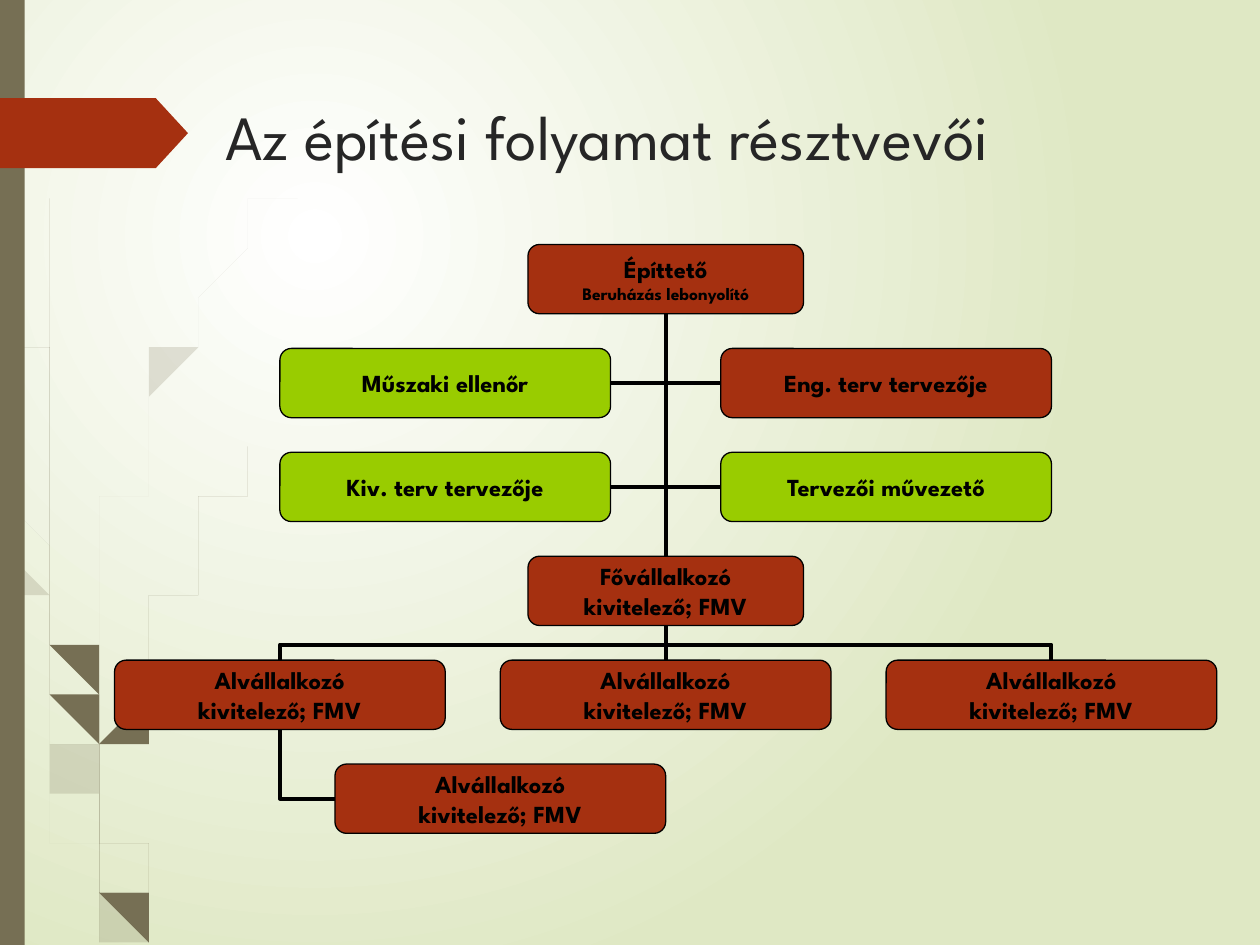
from math import hypot

from lxml.etree import SubElement
from pptx import Presentation
from pptx.dml.color import RGBColor
from pptx.enum.shapes import MSO_CONNECTOR, MSO_SHAPE
from pptx.enum.text import MSO_ANCHOR, PP_ALIGN
from pptx.oxml.ns import qn
from pptx.util import Cm, Pt

FONT = "League Spartan"
WHITE = RGBColor(0xFF, 0xFF, 0xFF)
PALE_GREEN = RGBColor(0xDF, 0xE8, 0xC4)
OLIVE = RGBColor(0x76, 0x6F, 0x54)
RED = RGBColor(0xA5, 0x30, 0x10)
GREEN = RGBColor(0x99, 0xCC, 0x00)
BLACK = RGBColor(0, 0, 0)
DARK_GREY = RGBColor(0x26, 0x26, 0x26)

TOP, LEFT, BOTTOM, RIGHT = 0, 1, 2, 3
SUBCONTRACTOR = "Alvállalkozó\nkivitelező; FMV"

# Centre lines of the grass blades, in cm from the corner of their region
PALE_BLADES = [
    [(0, 7.4), (0.28, 9.3), (1.04, 13.23), (1.5, 15.06), (2.18, 17.6), (2.69, 19.05)],
    [(0.2, 8.89), (0.51, 11.94), (1.18, 15.75), (1.63, 17.48), (2.08, 19.05)],
    [(5.51, 3.89), (4.03, 6.22), (2.81, 8.86), (1.92, 11.73), (1.52, 14.83),
     (1.56, 16.41), (1.7, 17.35), (2.16, 19.05)],
]
DARK_BLADES = [
    [(0.06, 0), (0.12, 2.79), (0.37, 5.92), (0.72, 9.02), (1.17, 11.81),
     (1.47, 14.12), (2.01, 16.71), (2.39, 18.03), (2.73, 19.05)],
    [(1.47, 3.58), (1.21, 6.22), (1.1, 8.86), (1.17, 11.43), (1.9, 15.01),
     (2.29, 16.38), (2.82, 17.96), (3.25, 19.05)],
    [(5.48, 8.74), (4.29, 10.31), (3.3, 12.07), (2.59, 14.01), (2.27, 16.05),
     (2.27, 16.64), (2.36, 17.55), (2.54, 18.26), (2.84, 19.05)],
]


def paint_background(slide):
    fill = slide.background.fill
    fill.gradient()
    for stop, color in zip(fill.gradient_stops, (WHITE, PALE_GREEN)):
        stop.color.rgb = color
    gradient = slide.element.find(".//" + qn("a:gradFill"))
    gradient.remove(gradient.find(qn("a:lin")))
    circle = SubElement(gradient, qn("a:path"), {"path": "circle"})
    SubElement(circle, qn("a:fillToRect"), l="50000", t="50000", r="100000", b="100000")


def fill_plain(shape, color):
    shape.shadow.inherit = False
    shape.fill.solid()
    shape.fill.fore_color.rgb = color
    shape.line.fill.background()


def smooth(points, steps=8):
    """Run a Catmull-Rom curve through the points."""
    padded = [points[0], *points, points[-1]]
    curve = []
    for a, b, c, d in zip(padded, padded[1:], padded[2:], padded[3:]):
        for t in (step / steps for step in range(steps)):
            curve.append(tuple(
                (2 * q + (r - p) * t + (2 * p - 5 * q + 4 * r - s) * t**2
                 + (3 * q - p - 3 * r + s) * t**3) / 2
                for p, q, r, s in zip(a, b, c, d)))
    return curve + [points[-1]]


def add_blade(slide, left, top, points, opacity):
    """Draw a blade that widens from its tip to its root."""
    curve = smooth(points)
    last = len(curve) - 1
    near, far = [], []
    for i, (x, y) in enumerate(curve):
        before, after = curve[max(i - 1, 0)], curve[min(i + 1, last)]
        dx, dy = after[0] - before[0], after[1] - before[1]
        half = 0.01 + 0.05 * i / last
        nx, ny = -dy / hypot(dx, dy) * half, dx / hypot(dx, dy) * half
        near.append((x + nx, y + ny))
        far.append((x - nx, y - ny))
    outline = near + far[::-1]
    builder = slide.shapes.build_freeform(*outline[0], scale=Cm(1))
    builder.add_line_segments(outline[1:], close=True)
    blade = builder.convert_to_shape(Cm(left), Cm(top))
    fill_plain(blade, OLIVE)
    if opacity < 100:
        color = blade.element.spPr.find(".//" + qn("a:srgbClr"))
        SubElement(color, qn("a:alpha"), val=str(opacity * 1000))


def add_side_decoration(slide, left, top, height):
    for blades, opacity in ((PALE_BLADES, 20), (DARK_BLADES, 100)):
        for points in blades:
            add_blade(slide, left, top, points, opacity)
    strip = slide.shapes.add_shape(
        MSO_SHAPE.RECTANGLE, Cm(left), Cm(top), Cm(0.5), Cm(height))
    fill_plain(strip, OLIVE)


def add_header(slide, left, top, width, height):
    # Pointed tab
    tab = slide.shapes.add_shape(
        MSO_SHAPE.PENTAGON, Cm(left), Cm(top + 0.25), Cm(3.79), Cm(1.41))
    tab.adjustments[0] = 0.46
    fill_plain(tab, RED)
    # Title
    title = slide.shapes.add_textbox(
        Cm(left + 4.29), Cm(top), Cm(width - 4.29), Cm(height))
    frame = title.text_frame
    frame.word_wrap = True
    frame.vertical_anchor = MSO_ANCHOR.MIDDLE
    paragraph = frame.paragraphs[0]
    paragraph.text = "Az építési folyamat résztvevői"
    paragraph.font.name = FONT
    paragraph.font.size = Pt(36)
    paragraph.font.color.rgb = DARK_GREY


def style_connector(connector):
    connector.line.color.rgb = BLACK
    connector.line.width = Pt(2.25)
    SubElement(connector.element.spPr, qn("a:effectLst"))


def add_stem(slide, lower, upper):
    stem = slide.shapes.add_connector(MSO_CONNECTOR.STRAIGHT, 0, 0, 0, 0)
    stem.begin_connect(lower, TOP)
    stem.end_connect(upper, BOTTOM)
    style_connector(stem)


def add_corner(slide, box, side, x, y):
    """Leave the side of a box level, then turn up to (x, y)."""
    start = box.left if side == LEFT else box.left + box.width
    corner = slide.shapes.add_connector(
        MSO_CONNECTOR.ELBOW, start, box.top + box.height // 2, x, y)
    corner.element.spPr.prstGeom.set("prst", "bentConnector2")
    style_connector(corner)


def add_branch(slide, child, x, parent):
    """Rise from the top of a child, run level, rise to the parent at x."""
    child_x = x + (child.left + child.width // 2 - x)
    bottom = parent.top + parent.height
    rise, run = child.top - bottom, abs(child_x - x)
    left, top = (child_x + x - rise) // 2, (child.top + bottom - run) // 2
    begin, end = (left, left + rise) if child_x < x else (left + rise, left)
    branch = slide.shapes.add_connector(
        MSO_CONNECTOR.ELBOW, begin, top, end, top + run)
    branch.element.spPr.xfrm.set("rot", str((270 if child_x < x else 90) * 60000))
    guides = branch.element.spPr.prstGeom.get_or_add_avLst()
    SubElement(guides, qn("a:gd"), name="adj1", fmla="val 45000")
    style_connector(branch)


def add_org_chart(slide, left, top, width, height):
    unit, pitch = width / 20, height * 3 / 17

    def add_box(text, column, row, span=6, color=RED, note=None):
        box = slide.shapes.add_shape(
            MSO_SHAPE.ROUNDED_RECTANGLE, Cm(left + column * unit),
            Cm(top + row * pitch), Cm(span * unit), Cm(pitch * 2 / 3))
        fill_plain(box, color)
        box.line.color.rgb = BLACK
        box.line.width = Pt(0.75)
        frame = box.text_frame
        frame.margin_left = frame.margin_right = 0
        frame.margin_top = frame.margin_bottom = 0
        frame.word_wrap = False
        frame.vertical_anchor = MSO_ANCHOR.MIDDLE
        frame.text = text
        for paragraph in frame.paragraphs:
            paragraph.alignment = PP_ALIGN.CENTER
            font = paragraph.font
            font.name, font.size, font.bold = FONT, Pt(14), True
            font.color.rgb = BLACK
        if note:
            paragraph.add_line_break()
            run = paragraph.add_run()
            run.text = note
            run.font.size = Pt(10)
        return box

    # Boxes
    client = add_box("Építtető", 7.5, 0, 5, note="Beruházás lebonyolító")
    left_side = [add_box("Műszaki ellenőr", 3, 1, color=GREEN),
                 add_box("Kiv. terv tervezője", 3, 2, color=GREEN)]
    right_side = [add_box("Eng. terv tervezője", 11, 1),
                  add_box("Tervezői művezető", 11, 2, color=GREEN)]
    contractor = add_box("Fővállalkozó\nkivitelező; FMV", 7.5, 3, 5)
    first, second, third = [add_box(SUBCONTRACTOR, column, 4) for column in (0, 7, 14)]
    nested = add_box(SUBCONTRACTOR, 4, 5)

    # Connectors
    axis = client.left + client.width // 2
    add_stem(slide, contractor, client)
    add_stem(slide, second, contractor)
    for boxes, side in ((left_side, RIGHT), (right_side, LEFT)):
        for box in boxes:
            add_corner(slide, box, side, axis, client.top + client.height)
    for child in (first, third):
        add_branch(slide, child, axis, contractor)
    add_corner(slide, nested, LEFT, first.left + first.width // 2, first.top + first.height)


def main():
    presentation = Presentation()
    presentation.slide_width, presentation.slide_height = Cm(25.4), Cm(19.05)
    slide = presentation.slides.add_slide(presentation.slide_layouts[6])
    paint_background(slide)
    add_side_decoration(slide, 0, 0, 19.05)
    add_header(slide, 0, 1.73, 24.28, 1.98)
    add_org_chart(slide, 2.31, 4.93, 22.22, 11.87)
    presentation.save("out.pptx")


if __name__ == "__main__":
    main()
